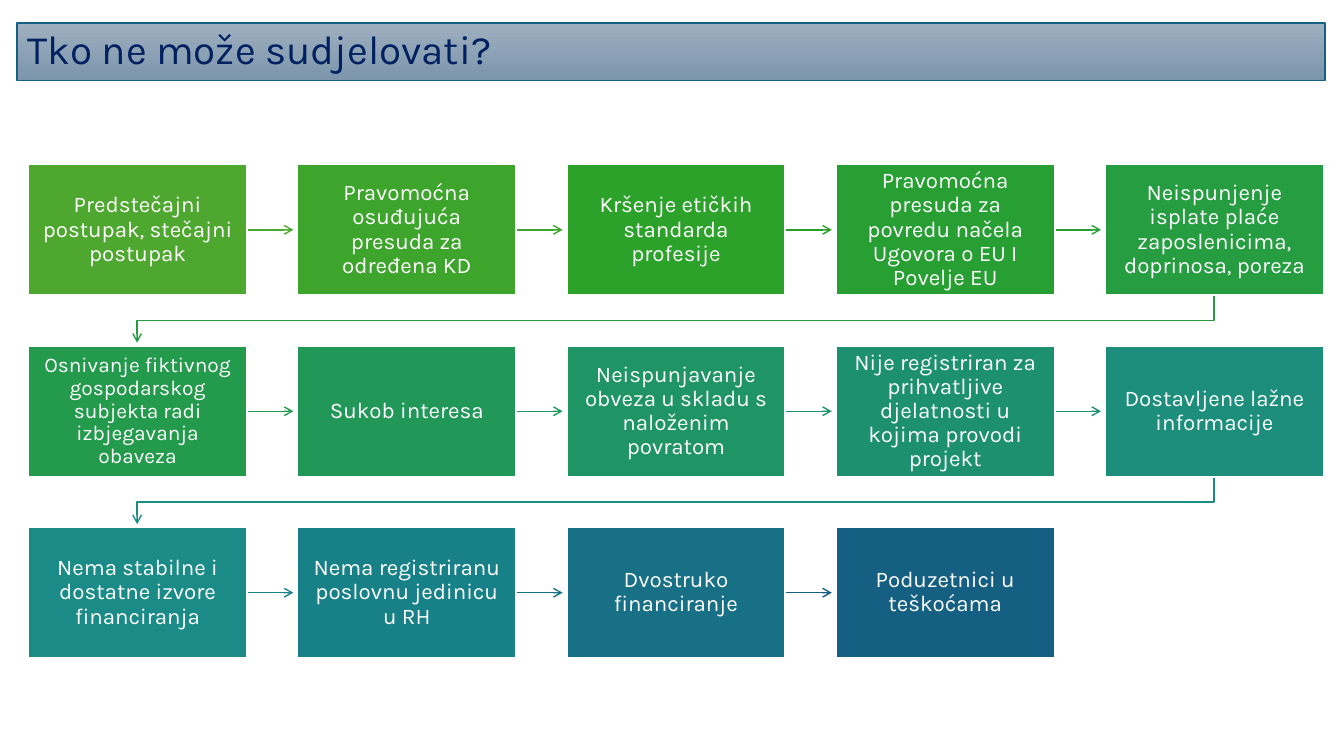
from pptx import Presentation
from pptx.dml.color import RGBColor as RGB
from pptx.enum.shapes import MSO_CONNECTOR as CONN, MSO_SHAPE as SHAPE
from pptx.enum.text import MSO_ANCHOR as ANCHOR, MSO_AUTO_SIZE as AUTO, PP_ALIGN as ALIGN
from pptx.oxml.ns import qn
from pptx.util import Pt
from lxml.etree import SubElement

# Content: text, box colour, colour of the arrow to the next box
TITLE = "Tko ne može sudjelovati?"
STEPS = [
    ("Predstečajni postupak, stečajni postupak", RGB(0x4E, 0xA7, 0x2E), RGB(0x4E, 0xA7, 0x2E)),
    ("Pravomoćna osuđujuća presuda za određena KD", RGB(0x3D, 0xA4, 0x2C), RGB(0x3C, 0xA4, 0x2C)),
    ("Kršenje etičkih standarda profesije", RGB(0x2C, 0xA2, 0x2A), RGB(0x29, 0xA1, 0x29)),
    ("Pravomoćna presuda za povredu načela Ugovora o EU I Povelje EU",
     RGB(0x27, 0x9F, 0x33), RGB(0x27, 0x9F, 0x36)),
    ("Neispunjenje isplate plaće zaposlenicima, doprinosa, poreza",
     RGB(0x25, 0x9D, 0x40), RGB(0x25, 0x9C, 0x44)),
    ("Osnivanje fiktivnog gospodarskog subjekta radi izbjegavanja obaveza",
     RGB(0x23, 0x9A, 0x4C), RGB(0x22, 0x99, 0x51)),
    ("Sukob interesa", RGB(0x21, 0x97, 0x58), RGB(0x20, 0x96, 0x5E)),
    ("Neispunjavanje obveza u skladu s naloženim povratom",
     RGB(0x1F, 0x94, 0x64), RGB(0x1E, 0x93, 0x6A)),
    ("Nije registriran za prihvatljive djelatnosti u kojima provodi projekt",
     RGB(0x1D, 0x91, 0x6F), RGB(0x1C, 0x8F, 0x77)),
    ("Dostavljene lažne informacije", RGB(0x1C, 0x8E, 0x7B), RGB(0x1A, 0x8C, 0x83)),
    ("Nema stabilne i dostatne izvore financiranja", RGB(0x1A, 0x8B, 0x86), RGB(0x19, 0x83, 0x89)),
    ("Nema registriranu poslovnu jedinicu u RH", RGB(0x18, 0x81, 0x88), RGB(0x17, 0x71, 0x85)),
    ("Dvostruko financiranje", RGB(0x17, 0x70, 0x85), RGB(0x15, 0x60, 0x82)),
    ("Poduzetnici u teškoćama", RGB(0x15, 0x60, 0x82), None),
]
SMALLER = {5: 15}  # step index: text size
WHITE = RGB(0xFF, 0xFF, 0xFF)
NAVY = RGB(0x00, 0x20, 0x60)
BLUE = RGB(0x15, 0x60, 0x82)
BAR_TOP, BAR_BOTTOM = RGB(0x9E, 0xAF, 0xBF), RGB(0x7C, 0x95, 0xAB)
FONT = "Karla"

# Geometry, 100 px to the inch
PX = 9144
COLS = 5
LEFT, TOP, BOX_W, BOX_H = 28, 163, 217, 130
STEP_X, STEP_Y = 267, 180
ARROW_LEN, TURN_DROP, TURN_LEN = 46, 25, 47
INSET = 11


def px(*lengths):
    return [n * PX for n in lengths]


def write(tf, text, size, color, align):
    tf.word_wrap = True
    tf.auto_size = AUTO.NONE
    tf.vertical_anchor = ANCHOR.MIDDLE
    p = tf.paragraphs[0]
    p.alignment = align
    p.line_spacing = 0.9
    r = p.add_run()
    r.text = text
    r.font.name, r.font.size = FONT, Pt(size)
    r.font.color.rgb = color


def style_arrow(sp, color):
    sp.line.color.rgb = color
    sp.line.width = Pt(1)
    sp_pr = sp.element.spPr
    SubElement(sp_pr.find(qn("a:ln")), qn("a:tailEnd"), type="arrow")
    if sp_pr.find(qn("a:effectLst")) is None:
        SubElement(sp_pr, qn("a:effectLst"))


def add_arrow(s, i, x, y, color):
    if (i + 1) % COLS:  # straight on to the next column
        x, y = x + BOX_W, y + BOX_H // 2
        sp = s.shapes.add_connector(CONN.STRAIGHT, *px(x, y, x + ARROW_LEN, y))
    else:  # back to the start of the next row
        x, y = x + BOX_W // 2, y + BOX_H
        first = LEFT + BOX_W // 2
        fb = s.shapes.build_freeform(x, y, scale=PX)
        fb.add_line_segments([(x, y + TURN_DROP), (first, y + TURN_DROP),
                              (first, y + TURN_LEN)], close=False)
        sp = fb.convert_to_shape()
        sp.fill.background()
    style_arrow(sp, color)


def add_box(s, x, y, text, size, color):
    sp = s.shapes.add_shape(SHAPE.RECTANGLE, *px(x, y, BOX_W, BOX_H))
    sp.shadow.inherit = False
    sp.fill.solid()
    sp.fill.fore_color.rgb = color
    sp.line.color.rgb = WHITE
    sp.line.width = Pt(1.5)
    tf = sp.text_frame
    tf.margin_left = tf.margin_right = tf.margin_top = tf.margin_bottom = INSET * PX
    write(tf, text, size, WHITE, ALIGN.CENTER)


def main():
    prs = Presentation()
    prs.slide_width, prs.slide_height = px(1333, 750)
    s = prs.slides.add_slide(prs.slide_layouts[5])

    # Title bar
    title = s.shapes.title
    title.left, title.top, title.width, title.height = px(17, 23, 1297, 57)
    title.fill.gradient()
    title.fill.gradient_angle = 270
    for stop, color in zip(title.fill.gradient_stops, (BAR_TOP, BAR_BOTTOM)):
        stop.color.rgb = color
    title.line.color.rgb = BLUE
    title.line.width = Pt(1)
    write(title.text_frame, TITLE, 28.8, NAVY, ALIGN.LEFT)

    # Chain of boxes, row by row
    for i, (text, fill, arrow) in enumerate(STEPS):
        row, col = divmod(i, COLS)
        x, y = LEFT + col * STEP_X, TOP + row * STEP_Y
        if arrow is not None:
            add_arrow(s, i, x, y, arrow)
        add_box(s, x, y, text, SMALLER.get(i, 16), fill)

    prs.save("out.pptx")


if __name__ == "__main__":
    main()
